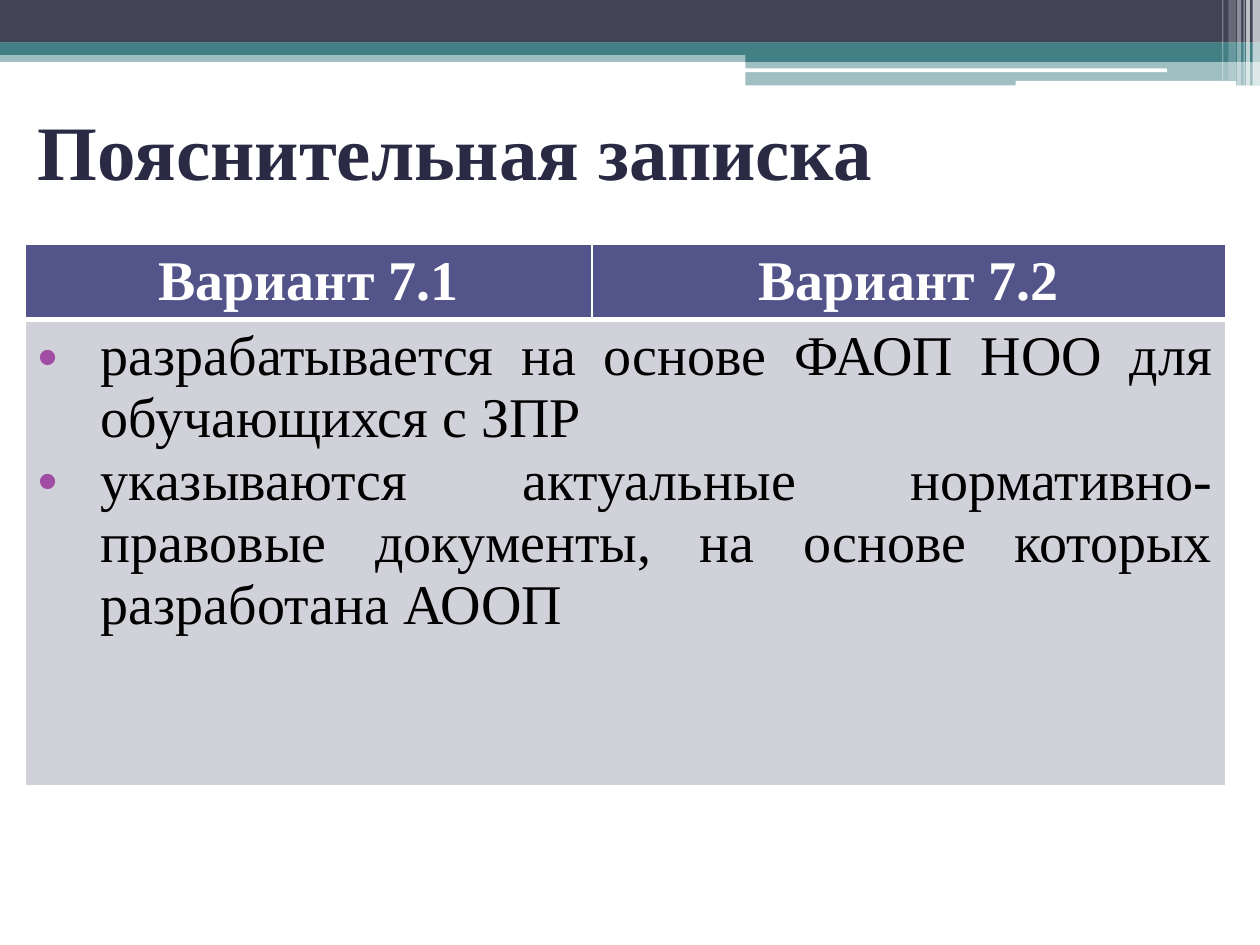
from lxml.etree import SubElement
from pptx import Presentation
from pptx.dml.color import RGBColor
from pptx.enum.shapes import MSO_SHAPE
from pptx.enum.text import MSO_ANCHOR, PP_ALIGN
from pptx.oxml.ns import qn
from pptx.util import Pt

TITLE_ONLY = 5


def rgb(value):
    return RGBColor.from_string(value)


def add_color(parent, color, alpha=None):
    clr = SubElement(parent, qn("a:srgbClr"), val=color)
    if alpha is not None:
        SubElement(clr, qn("a:alpha"), val=str(alpha * 1000))


class SlideBuilder:
    FONT = "Times New Roman"
    DARK, TEAL, WHITE = "424456", "438086", "FFFFFF"
    TITLE, HEADER, BODY = "2A2A45", "53548A", "D1D1DA"
    TEXT, BULLET = "000000", "A04DA3"

    def __init__(self, slide):
        self.slide = slide

    def font(self, p, size, color, bold=False):
        f = p.font
        f.name, f.size, f.bold = self.FONT, Pt(size), bold
        f.color.rgb = rgb(color)

    def title(self, text, *box):
        sp = self.slide.shapes.title
        sp.left, sp.top, sp.width, sp.height = map(Pt, box)
        tf = sp.text_frame
        tf.text = text
        tf.vertical_anchor = MSO_ANCHOR.MIDDLE
        p = tf.paragraphs[0]
        p.alignment = PP_ALIGN.LEFT
        self.font(p, 44, self.TITLE, True)

    def bar(self, box, color, alpha=None, kind=MSO_SHAPE.RECTANGLE):
        sp = self.slide.shapes.add_shape(kind, *map(Pt, box))
        sp.shadow.inherit = False
        sp.line.fill.background()
        sp.fill.solid()
        sp.fill.fore_color.rgb = rgb(color)
        if alpha is not None:
            fill = sp.fill._xPr.find(qn("a:solidFill"))
            fill.remove(fill[0])
            add_color(fill, color, alpha)

    def borders(self, cell, top, bottom):
        tc_pr = cell._tc.get_or_add_tcPr()
        widths = {"lnL": 1, "lnR": 1, "lnT": top, "lnB": bottom}
        for i, (tag, width) in enumerate(widths.items()):
            ln = SubElement(tc_pr, qn(f"a:{tag}"), w=str(Pt(width)))
            add_color(SubElement(ln, qn("a:solidFill")), self.WHITE)
            tc_pr.insert(i, ln)

    def cell(self, cell, fill, top, bottom):
        cell.fill.solid()
        cell.fill.fore_color.rgb = rgb(fill)
        self.borders(cell, top, bottom)

    def bullet(self, p):
        p.alignment = PP_ALIGN.JUSTIFY
        p_pr = p._p.get_or_add_pPr()
        p_pr.set("marL", str(Pt(36)))
        p_pr.set("indent", str(Pt(-36)))
        bu_clr = SubElement(p_pr, qn("a:buClr"))
        add_color(bu_clr, self.BULLET)
        bu_font = SubElement(p_pr, qn("a:buFont"), typeface="Arial")
        bu_char = SubElement(p_pr, qn("a:buChar"), char="•")
        for i, node in enumerate((bu_clr, bu_font, bu_char)):
            p_pr.insert(i, node)

    def table(self, headers, items, left, top, widths, heights):
        table = self.slide.shapes.add_table(
            2, len(widths), Pt(left), Pt(top), Pt(sum(widths)), Pt(sum(heights))
        ).table
        for col, width in zip(table.columns, widths):
            col.width = Pt(width)
        for row, height in zip(table.rows, heights):
            row.height = Pt(height)
        for i, text in enumerate(headers):
            cell = table.cell(0, i)
            cell.text = text
            p = cell.text_frame.paragraphs[0]
            p.alignment = PP_ALIGN.CENTER
            self.font(p, 32, self.WHITE, True)
            self.cell(cell, self.HEADER, 1, 3)
            self.cell(table.cell(1, i), self.BODY, 3, 1)
        body = table.cell(1, 0)
        body.merge(table.cell(1, len(widths) - 1))
        body.text = "\n".join(items)
        for p in body.text_frame.paragraphs:
            self.font(p, 32, self.TEXT)
            self.bullet(p)


def main():
    prs = Presentation()
    prs.slide_width, prs.slide_height = Pt(720), Pt(540)
    s = SlideBuilder(prs.slides.add_slide(prs.slide_layouts[TITLE_ONLY]))

    s.bar((0, 28.8, 720, 6.6), s.TEAL, 50)
    s.bar((0, 0, 720, 24.4), s.DARK)
    s.bar((0, 24.2, 720, 7.2), s.TEAL)
    s.bar((426, 28.2, 294, 7.2), s.TEAL)
    s.bar((426, 34.6, 294, 14.2), s.TEAL, 50)
    for box in ((425.6, 39.1, 241.2, 2.2), (580.4, 46.2, 126, 2.9)):
        s.bar(box, s.WHITE, kind=MSO_SHAPE.ROUNDED_RECTANGLE)

    stripes = (
        (715.8, 4.2, 48.8, 65),
        (712.1, 2.2, 48.8, 65),
        (710.6, 0.7, 48.8, 60),
        (707, 2.2, 48.8, 40),
        (702, 4.3, 46, 20),
        (698.4, 0.7, 46, 30),
    )
    for left, width, height, alpha in stripes:
        s.bar((left, 0, width, height), s.WHITE, alpha)

    s.title("Пояснительная записка", 14.4, 43.2, 648, 84.2)
    s.table(
        ("Вариант 7.1", "Вариант 7.2"),
        (
            "разрабатывается на основе ФАОП НОО для обучающихся с ЗПР",
            "указываются актуальные нормативно-правовые документы, "
            "на основе которых разработана АООП",
        ),
        14.4, 139.7, (324, 362), (42, 266.4),
    )
    prs.save("out.pptx")


if __name__ == "__main__":
    main()
